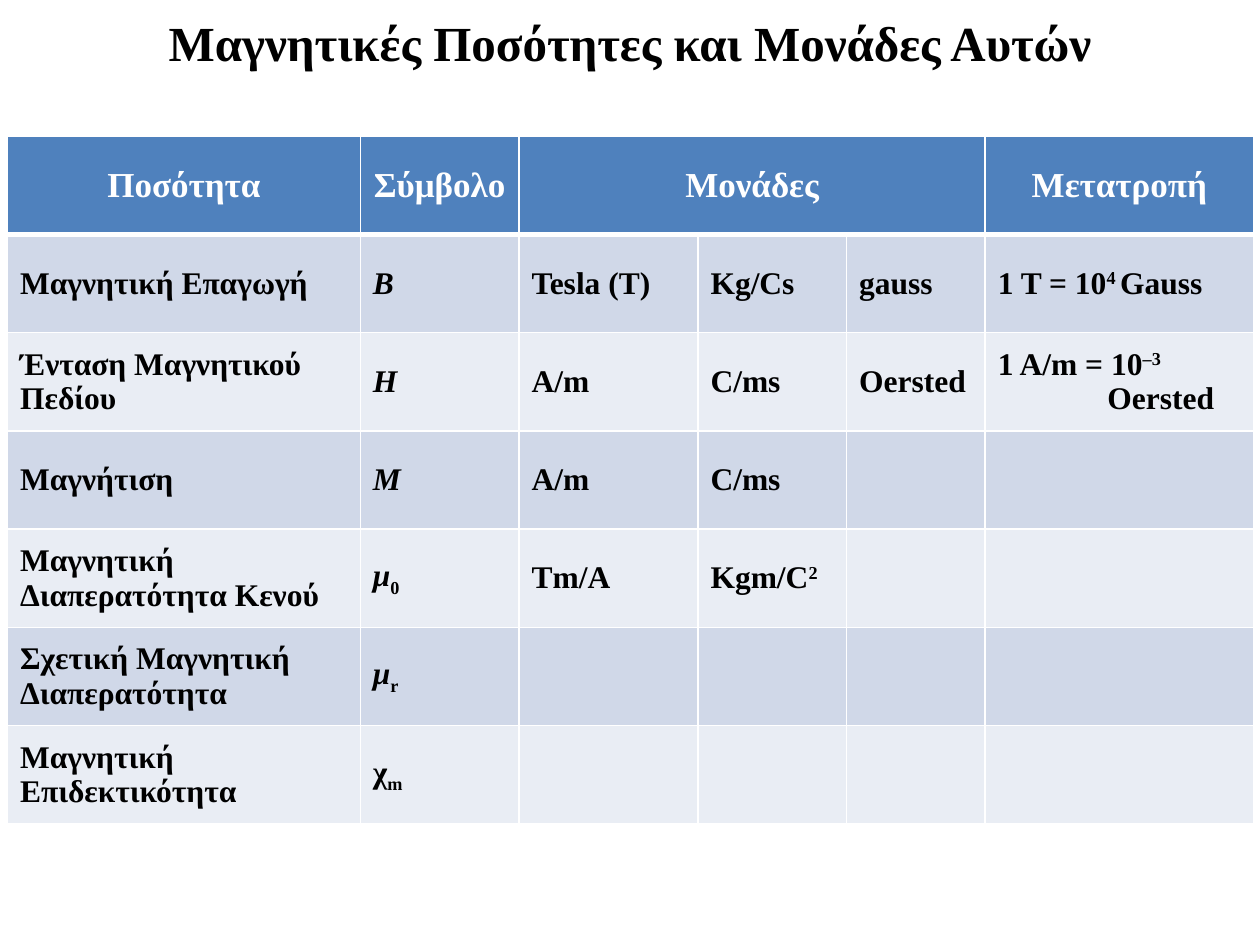
from lxml import etree
from pptx import Presentation
from pptx import util as u
from pptx.dml.color import RGBColor
from pptx.enum import text
from pptx.oxml import ns

FONT = "Times New Roman"
HEADER = ["Ποσότητα", "Σύμβολο", "Μονάδες", "", "", "Μετατροπή"]
# A bar switches between normal text and sub- or superscript.
ROWS = [
    HEADER,
    ["Μαγνητική Επαγωγή", "Β", "Tesla (T)", "Kg/Cs", "gauss", "1 T = 10|4 |Gauss"],
    ["Ένταση Μαγνητικού Πεδίου", "Η", "Α/m", "C/ms", "Oersted", "1 A/m = 10|–3\nOersted"],
    ["Μαγνήτιση", "Μ", "Α/m", "C/ms", "", ""],
    ["Μαγνητική Διαπερατότητα Κενού", "μ|0", "Tm/A", "Kgm/C|2", "", ""],
    ["Σχετική Μαγνητική Διαπερατότητα", "μ|r", "", "", "", ""],
    ["Μαγνητική Επιδεκτικότητα", "χ|m", "", "", "", ""],
]
WIDTHS = [2.8, 1.26, 1.42, 1.18, 1.1, 2.13]
ROW_HEIGHT = 0.78
SUBSCRIPT, SUPERSCRIPT = "-25000", "30000"


def style(span, size, color):
    span.font.name = FONT
    span.font.size = u.Pt(size)
    span.font.bold = True
    span.font.color.rgb = RGBColor.from_string(color)


def add_borders(cell, bottom):
    properties = cell._tc.get_or_add_tcPr()
    for index, (side, width) in enumerate([("L", 1), ("R", 1), ("T", 1), ("B", bottom)]):
        line = etree.Element(ns.qn(f"a:ln{side}"), w=str(u.Pt(width)))
        fill = etree.SubElement(line, ns.qn("a:solidFill"))
        etree.SubElement(fill, ns.qn("a:srgbClr"), val="FFFFFF")
        properties.insert(index, line)


deck = Presentation()
deck.slide_width, deck.slide_height = u.Inches(10), u.Inches(7.5)
page = deck.slides.add_slide(deck.slide_layouts[5])

title = page.shapes.title
title.left, title.top = u.Inches(0), u.Inches(0.05)
title.width, title.height = u.Inches(10), u.Inches(0.57)
title.text_frame.text = "Μαγνητικές Ποσότητες και Μονάδες Αυτών"
title.text_frame.vertical_anchor = text.MSO_ANCHOR.TOP
title.text_frame.auto_size = text.MSO_AUTO_SIZE.NONE
title.text_frame.paragraphs[0].alignment = text.PP_ALIGN.CENTER
style(title.text_frame.paragraphs[0].runs[0], 28, "000000")

table = page.shapes.add_table(
    len(ROWS), len(WIDTHS), u.Inches(0.06), u.Inches(1.08),
    u.Inches(sum(WIDTHS)), u.Inches(ROW_HEIGHT * len(ROWS))).table
for column, width in zip(table.columns, WIDTHS):
    column.width = u.Inches(width)
for row in table.rows:
    row.height = u.Inches(ROW_HEIGHT)
table.cell(0, 2).merge(table.cell(0, 4))

for r, values in enumerate(ROWS):
    is_header = r == 0
    background = "4F81BD" if is_header else ("E9EDF4", "D0D8E8")[r % 2]
    for c, value in enumerate(values):
        cell = table.cell(r, c)
        cell.vertical_anchor = text.MSO_ANCHOR.MIDDLE
        cell.fill.solid()
        cell.fill.fore_color.rgb = RGBColor.from_string(background)
        add_borders(cell, 3 if is_header else 1)
        for number, content in enumerate(value.split("\n") if value else []):
            para = cell.text_frame.add_paragraph() if number else cell.text_frame.paragraphs[0]
            if is_header:
                para.alignment = text.PP_ALIGN.CENTER
            if number:
                para._p.get_or_add_pPr().set("marL", str(u.Inches(0.87)))
            for part, words in enumerate(content.split("|")):
                span = para.add_run()
                span.text = words
                style(span, 20 if is_header else 18, "FFFFFF" if is_header else "000000")
                if part % 2:
                    span.font._element.set("baseline", SUBSCRIPT if c == 1 else SUPERSCRIPT)
                elif c == 1 and not is_header and words != "χ":
                    span.font.italic = True

deck.save("out.pptx")
